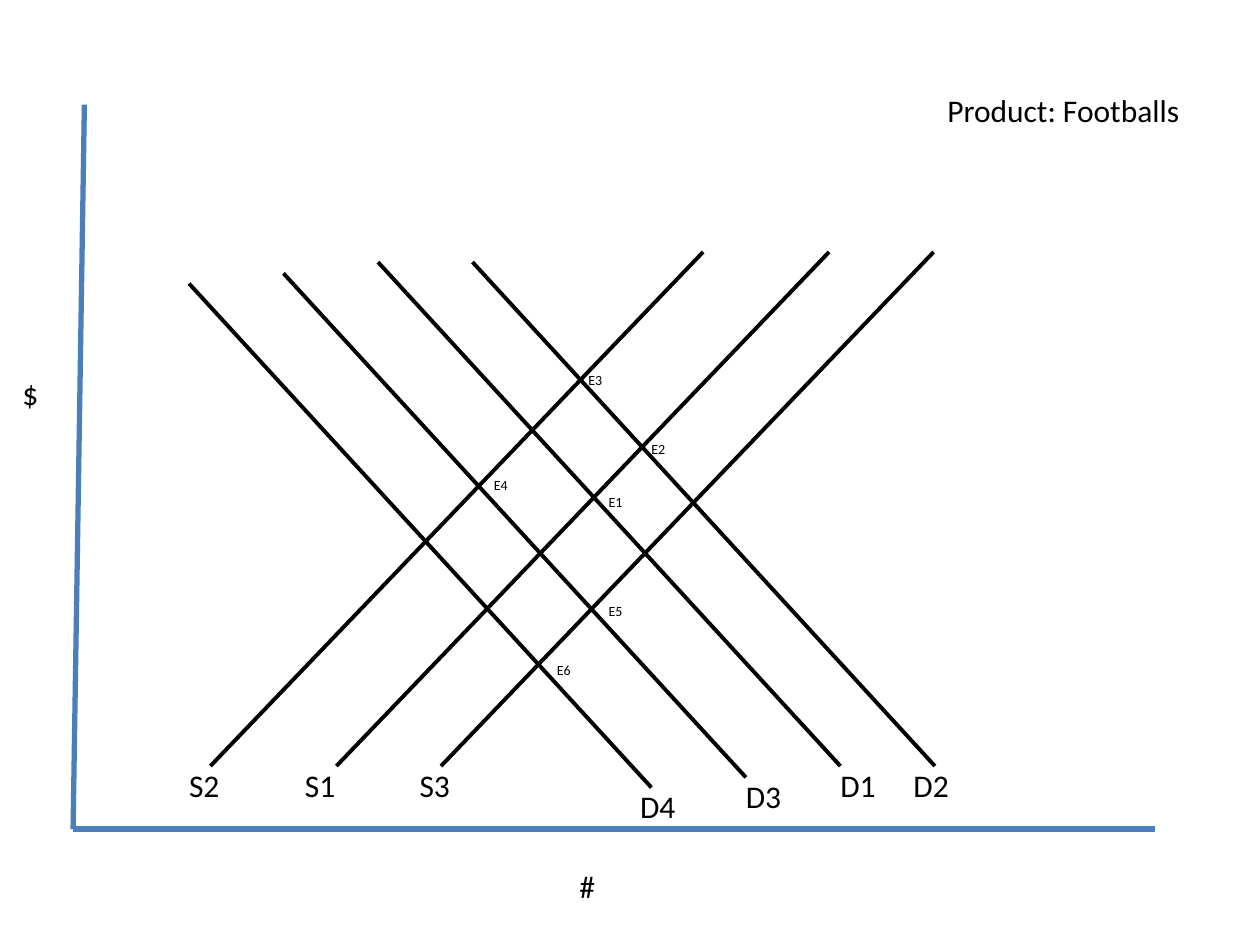
from lxml import etree
from pptx import Presentation
from pptx.dml.color import RGBColor
from pptx.enum import shapes, text
from pptx.oxml.ns import qn
from pptx.util import Inches, Pt

BLACK = RGBColor(0x00, 0x00, 0x00)
AXIS_BLUE = RGBColor(0x4B, 0x7E, 0xBC)
FONT = "Calibri"

# Name, start of the line, its label (all relative to the chart box)
SUPPLY = [("S1", 2.09, 1.84), ("S2", 1.09, 0.92), ("S3", 2.92, 2.75)]
SUPPLY_RUN, SUPPLY_TOP, SUPPLY_BOTTOM = 3.91, 1.17, 5.25
DEMAND = [
    ("D1", (2.42, 1.25), (6.09, 5.25)),
    ("D2", (3.17, 1.25), (6.67, 5.25)),
    ("D3", (1.67, 1.34), (5.34, 5.34)),
    ("D4", (0.92, 1.42), (4.50, 5.42)),
]
DEMAND_RUN, DEMAND_DROP = 3.67, 4
EQUILIBRIA = [
    ("E1", 4.25, 3.09), ("E2", 4.59, 2.67), ("E3", 4.09, 2.12),
    ("E4", 3.34, 2.95), ("E5", 4.25, 3.95), ("E6", 3.84, 4.42),
]


def add_line(slide, start, end, color=BLACK, width=2.25):
    line = slide.shapes.add_connector(
        shapes.MSO_CONNECTOR.STRAIGHT, *(Inches(v) for v in (*start, *end)))
    line.line.color.rgb = color
    line.line.width = Pt(width)
    etree.SubElement(line._element.spPr, qn("a:effectLst"))


def add_label(slide, words, left, top, width, height, size=18, inset=True):
    sp = slide.shapes.add_textbox(
        Inches(left), Inches(top), Inches(width), Inches(height))
    tf = sp.text_frame
    tf.word_wrap = True
    tf.auto_size = text.MSO_AUTO_SIZE.SHAPE_TO_FIT_TEXT
    if not inset:
        tf.margin_left = tf.margin_right = tf.margin_top = tf.margin_bottom = 0
    r = tf.paragraphs[0].add_run()
    r.text = words
    r.font.size = Pt(size)
    r.font.name = FONT
    r.font.color.rgb = BLACK


def add_axes(slide, left, top, width, height):
    origin = (left, top + height)
    add_line(slide, (left + 0.09, top), origin, AXIS_BLUE, 3)
    add_line(slide, (left + width, top + height), origin, AXIS_BLUE, 3)
    add_label(slide, "$", left - 0.5, top + 2.09, 0.42, 0.4)
    add_label(slide, "#", left + 3.92, top + height + 0.25, 0.42, 0.4)


def add_curves(slide, left, top):
    # Supply lines rise to the right
    for name, x, label_x in SUPPLY:
        add_line(slide, (left + x, top + SUPPLY_BOTTOM),
                 (left + x + SUPPLY_RUN, top + SUPPLY_TOP))
        add_label(slide, name, left + label_x, top + SUPPLY_BOTTOM,
                  0.25, 0.3, inset=False)
    # Demand lines fall to the right
    for name, (x, y), (label_x, label_y) in DEMAND:
        add_line(slide, (left + x, top + y),
                 (left + x + DEMAND_RUN, top + y + DEMAND_DROP))
        add_label(slide, name, left + label_x, top + label_y,
                  0.33, 0.3, inset=False)
    # Equilibrium points
    for name, x, y in EQUILIBRIA:
        add_label(slide, name, left + x, top + y, 0.17, 0.13, 8, inset=False)


def main():
    prs = Presentation()
    prs.slide_width, prs.slide_height = Inches(10), Inches(7.5)
    slide = prs.slides.add_slide(prs.slide_layouts[6])
    left, top = 0.58, 0.83
    add_axes(slide, left, top, 8.59, 5.75)
    add_curves(slide, left, top)
    add_label(slide, "Product: Footballs", 7.42, 0.67, 2.08, 0.4)
    prs.save("out.pptx")


if __name__ == "__main__":
    main()
